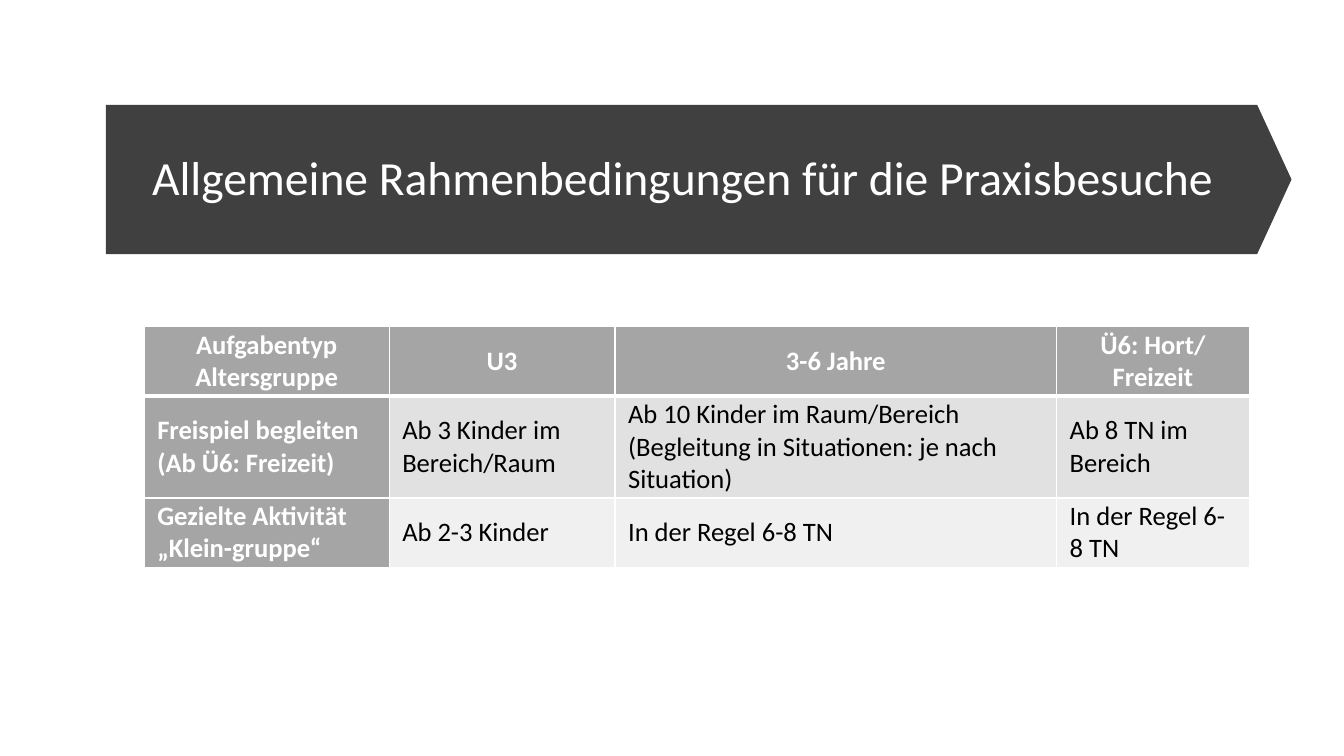
import dataclasses

import lxml.etree
import pptx
import pptx.dml.color
import pptx.enum.shapes
import pptx.enum.text
import pptx.oxml.ns
import pptx.slide
import pptx.table
import pptx.text.text
import pptx.util

Inches = pptx.util.Inches


@dataclasses.dataclass(frozen=True)
class Theme:
    font: str = "Calibri"
    title_size: float = 34
    table_size: float = 19
    white: str = "FFFFFF"
    black: str = "000000"
    banner: str = "404040"
    heading: str = "A5A5A5"
    bands: tuple[str, ...] = ("E1E1E1", "F0F0F0")
    thin_line: float = 1
    thick_line: float = 3


@dataclasses.dataclass(frozen=True)
class TableRow:
    height: float
    cells: tuple[str, ...]


THEME = Theme()
COLUMN_WIDTHS = (2.43, 2.24, 4.38, 1.91)
ROWS = (
    TableRow(0.69, ("Aufgabentyp\nAltersgruppe", "U3", "3-6 Jahre", "Ü6: Hort/\nFreizeit")),
    TableRow(1.01, (
        "Freispiel begleiten\n(Ab Ü6: Freizeit)",
        "Ab 3 Kinder im Bereich/Raum",
        "Ab 10 Kinder im Raum/Bereich (Begleitung in Situationen: je nach Situation)",
        "Ab 8 TN im Bereich",
    )),
    TableRow(0.69, (
        "Gezielte Aktivität „Klein-gruppe“",
        "Ab 2-3 Kinder",
        "In der Regel 6-8 TN",
        "In der Regel 6-8 TN",
    )),
)


def rgb(color: str) -> pptx.dml.color.RGBColor:
    return pptx.dml.color.RGBColor.from_string(color)


def add_run(paragraph: pptx.text.text._Paragraph, text: str, size: float,
            color: str, bold: bool = False) -> None:
    run = paragraph.add_run()
    run.text = text
    run.font.name = THEME.font
    run.font.size = pptx.util.Pt(size)
    run.font.bold = bold
    run.font.color.rgb = rgb(color)


def add_banner(slide: pptx.slide.Slide) -> None:
    banner = slide.shapes.add_shape(
        pptx.enum.shapes.MSO_SHAPE.PENTAGON,
        Inches(1.05), Inches(1.04), Inches(11.76), Inches(1.48))
    banner.adjustments[0] = 0.23
    banner.shadow.inherit = False
    banner.fill.solid()
    banner.fill.fore_color.rgb = rgb(THEME.banner)
    banner.line.fill.background()


def add_title(slide: pptx.slide.Slide, text: str) -> None:
    title = slide.shapes.add_textbox(
        Inches(1.41), Inches(1.32), Inches(10.96), Inches(0.94))
    frame = title.text_frame
    frame.word_wrap = True
    frame.vertical_anchor = pptx.enum.text.MSO_ANCHOR.MIDDLE
    paragraph = frame.paragraphs[0]
    paragraph.line_spacing = 0.9
    add_run(paragraph, text, THEME.title_size, THEME.white)


def set_borders(cell: pptx.table._Cell, top: float, bottom: float) -> None:
    """Put the border lines ahead of the cell's fill, as the schema requires."""
    properties = cell._tc.get_or_add_tcPr()
    widths = {"L": THEME.thin_line, "R": THEME.thin_line, "T": top, "B": bottom}
    for position, (side, width) in enumerate(widths.items()):
        line = lxml.etree.Element(
            pptx.oxml.ns.qn(f"a:ln{side}"), w=str(pptx.util.Pt(width)))
        fill = lxml.etree.SubElement(line, pptx.oxml.ns.qn("a:solidFill"))
        lxml.etree.SubElement(fill, pptx.oxml.ns.qn("a:srgbClr"), val=THEME.white)
        properties.insert(position, line)


def fill_cell(cell: pptx.table._Cell, text: str, row: int, column: int) -> None:
    is_heading = row == 0 or column == 0
    cell.margin_left = cell.margin_right = Inches(0.13)
    cell.margin_top = cell.margin_bottom = 0
    cell.vertical_anchor = pptx.enum.text.MSO_ANCHOR.MIDDLE
    cell.fill.solid()
    cell.fill.fore_color.rgb = rgb(THEME.heading if is_heading else THEME.bands[row - 1])
    set_borders(cell,
                top=THEME.thick_line if row == 1 else THEME.thin_line,
                bottom=THEME.thick_line if row == 0 else THEME.thin_line)

    frame = cell.text_frame
    for index, line in enumerate(text.split("\n")):
        paragraph = frame.add_paragraph() if index else frame.paragraphs[0]
        if row == 0:
            paragraph.alignment = pptx.enum.text.PP_ALIGN.CENTER
        add_run(paragraph, line, THEME.table_size,
                THEME.white if is_heading else THEME.black, is_heading)


def add_conditions_table(slide: pptx.slide.Slide) -> None:
    table = slide.shapes.add_table(
        len(ROWS), len(COLUMN_WIDTHS), Inches(1.43), Inches(3.24),
        Inches(sum(COLUMN_WIDTHS)), Inches(sum(row.height for row in ROWS))).table
    table.first_col = True
    for column, width in enumerate(COLUMN_WIDTHS):
        table.columns[column].width = Inches(width)
    for row_index, row in enumerate(ROWS):
        table.rows[row_index].height = Inches(row.height)
        for column, text in enumerate(row.cells):
            fill_cell(table.cell(row_index, column), text, row_index, column)


def main() -> None:
    presentation = pptx.Presentation()
    presentation.slide_width = Inches(13.33)
    presentation.slide_height = Inches(7.5)
    slide = presentation.slides.add_slide(presentation.slide_layouts[6])
    add_banner(slide)
    add_title(slide, "Allgemeine Rahmenbedingungen für die Praxisbesuche")
    add_conditions_table(slide)
    presentation.save("out.pptx")


if __name__ == "__main__":
    main()
